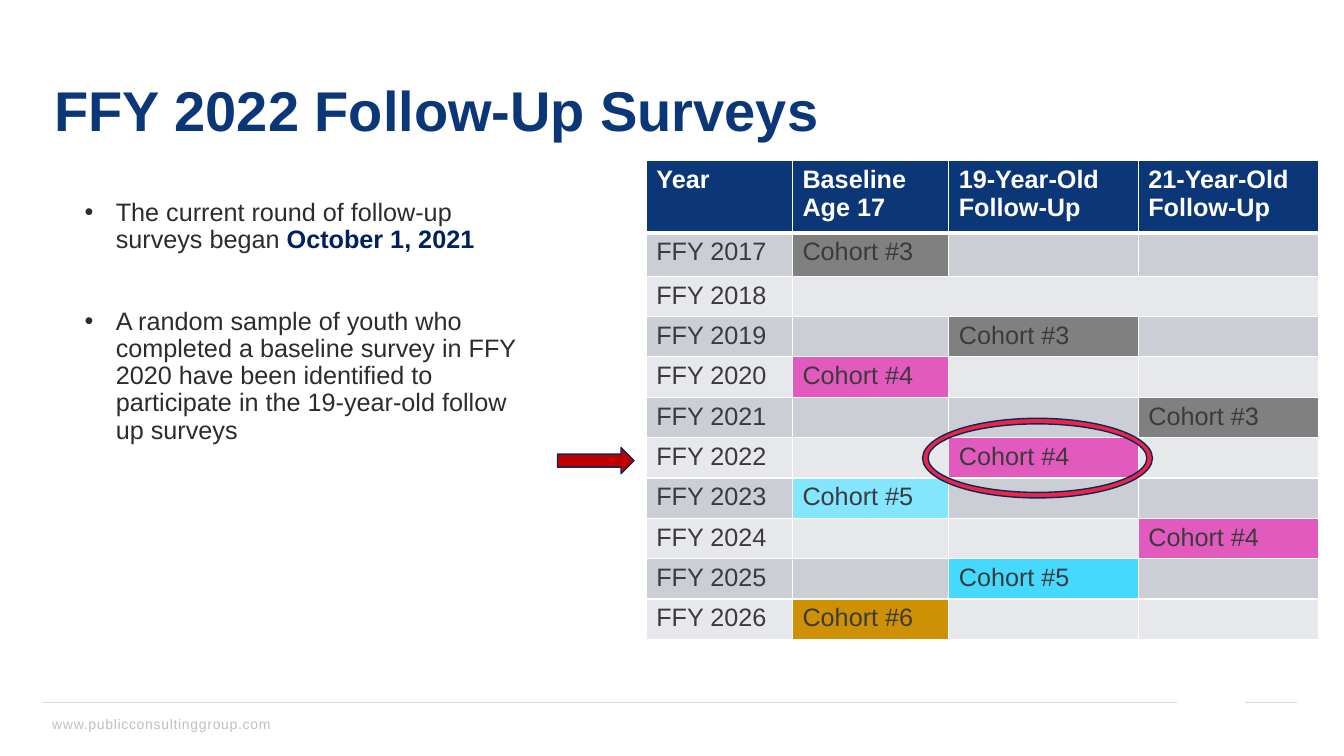
from lxml import etree
from pptx import Presentation
from pptx.dml.color import RGBColor
from pptx.enum.shapes import MSO_CONNECTOR, MSO_SHAPE
from pptx.enum.text import MSO_ANCHOR, PP_ALIGN
from pptx.oxml import parse_xml
from pptx.oxml.ns import nsdecls, qn
from pptx.util import Inches, Pt

NAVY, OUTLINE, WHITE = "0B3677", "082858", "FFFFFF"
BANDS = ("CCCED6", "E7E8EC")
GREY, PINK, PALE_CYAN, CYAN, GOLD = "808080", "E35ABF", "84E5FF", "46D9FF", "CE9105"

COLUMN_WIDTHS = (1.45, 1.55, 1.88, 1.79)
ROW_HEIGHTS = (0.72, 0.43) + (0.4,) * 9
HEADERS = ("Year", "Baseline\nAge 17", "19-Year-Old\nFollow-Up", "21-Year-Old\nFollow-Up")
FIRST_YEAR = 2017
# One entry per year: (column, cohort number, fill), or None for a year without surveys
COHORTS = (
    (1, 3, GREY),
    None,
    (2, 3, GREY),
    (1, 4, PINK),
    (3, 3, GREY),
    (2, 4, PINK),
    (1, 5, PALE_CYAN),
    (3, 4, PINK),
    (2, 5, CYAN),
    (1, 6, GOLD),
)
BULLETS = (
    (("The current round of follow-up surveys began ", "2C2C2C", False),
     ("October 1, 2021", "002060", True)),
    (("A random sample of youth who completed a baseline survey in FFY 2020 have been "
      "identified to participate in the 19-year-old follow up surveys", "2C2C2C", False),),
)


def rgb(color):
    return RGBColor.from_string(color)


def place(shape, left, top, width, height):
    shape.left, shape.top = Inches(left), Inches(top)
    shape.width, shape.height = Inches(width), Inches(height)


class SurveySlide:
    """Holds the text style and the slide being built."""

    def __init__(self, presentation, font_name="Arial"):
        self.font_name = font_name
        self.slide = presentation.slides.add_slide(presentation.slide_layouts[5])
        self.shapes = self.slide.shapes

    def format_font(self, font, size, color, bold=False):
        font.name, font.size, font.bold = self.font_name, Pt(size), bold
        font.color.rgb = rgb(color)

    def title(self, wording, *box):
        title = self.shapes.title
        place(title, *box)
        frame = title.text_frame
        frame.text = wording
        frame.vertical_anchor = MSO_ANCHOR.MIDDLE
        heading = frame.paragraphs[0]
        heading.alignment, heading.line_spacing = PP_ALIGN.LEFT, 0.9
        self.format_font(heading.runs[0].font, 40, NAVY, True)

    def text_frame(self, *box):
        frame = self.shapes.add_textbox(*map(Inches, box)).text_frame
        frame.word_wrap = True
        return frame

    def footer(self, wording, *box):
        frame = self.text_frame(*box)
        frame.text = wording
        run = frame.paragraphs[0].runs[0]
        self.format_font(run.font, 10, "BFBFBF")
        run.font._element.set("spc", "50")

    def bullets(self, items, *box):
        frame = self.text_frame(*box)
        for index, pieces in enumerate(items):
            item = frame.add_paragraph() if index else frame.paragraphs[0]
            properties = item._p.get_or_add_pPr()
            properties.set("marL", str(Inches(0.31)))
            properties.set("indent", str(-Inches(0.31)))
            etree.SubElement(properties, qn("a:buFont")).set("typeface", self.font_name)
            etree.SubElement(properties, qn("a:buChar")).set("char", "•")
            item.line_spacing = 0.9
            item.space_before = Pt(39 if index else 0)
            for wording, color, bold in pieces:
                run = item.add_run()
                run.text = wording
                self.format_font(run.font, 18, color, bold)

    def rule(self, start, end, y):
        rule = self.shapes.add_connector(
            MSO_CONNECTOR.STRAIGHT, Inches(start), Inches(y), Inches(end), Inches(y))
        rule.line.color.rgb, rule.line.width = rgb("D9D9D9"), Pt(0.5)
        etree.SubElement(rule._element.spPr, qn("a:effectLst"))

    def marker(self, kind, fill, *box):
        marker = self.shapes.add_shape(kind, *map(Inches, box))
        marker.shadow.inherit = False
        marker.fill.solid()
        marker.fill.fore_color.rgb = rgb(fill)
        marker.line.color.rgb, marker.line.width = rgb(OUTLINE), Pt(1)
        return marker

    def cell(self, cell, wording, fill, color, bold=False, top=1, bottom=1):
        cell.text = wording
        for paragraph in cell.text_frame.paragraphs:
            self.format_font(paragraph.font, 18, color, bold)
            for run in paragraph.runs:
                self.format_font(run.font, 18, color, bold)
        properties = cell._tc.get_or_add_tcPr()
        for side, width in (("L", 1), ("R", 1), ("T", top), ("B", bottom)):
            properties.append(parse_xml(
                f'<a:ln{side} {nsdecls("a")} w="{Pt(width)}"><a:solidFill>'
                f'<a:srgbClr val="{WHITE}"/></a:solidFill></a:ln{side}>'))
        cell.fill.solid()
        cell.fill.fore_color.rgb = rgb(fill)

    def cohort_table(self, left, top):
        table = self.shapes.add_table(
            len(ROW_HEIGHTS), len(COLUMN_WIDTHS), Inches(left), Inches(top),
            Inches(sum(COLUMN_WIDTHS)), Inches(sum(ROW_HEIGHTS))).table
        for column, width in zip(table.columns, COLUMN_WIDTHS):
            column.width = Inches(width)
        for row, height in zip(table.rows, ROW_HEIGHTS):
            row.height = Inches(height)
        for column, header in enumerate(HEADERS):
            self.cell(table.cell(0, column), header, NAVY, WHITE, True, bottom=3)
        for index, cohort in enumerate(COHORTS):
            row, band = index + 1, BANDS[index % 2]
            for column in range(len(HEADERS)):
                wording, fill = "", band
                if column == 0:
                    wording = f"FFY {FIRST_YEAR + index}"
                elif cohort and cohort[0] == column:
                    wording, fill = f"Cohort #{cohort[1]}", cohort[2]
                self.cell(table.cell(row, column), wording, fill, "3B3B3B",
                          top=3 if row == 1 else 1)
            if cohort is None:
                table.cell(row, 1).merge(table.cell(row, len(HEADERS) - 1))


def main():
    presentation = Presentation()
    presentation.slide_width, presentation.slide_height = Inches(13.33), Inches(7.5)
    page = SurveySlide(presentation)
    page.footer("www.publicconsultinggroup.com", 0.42, 7.05, 3.87, 0.28)
    page.rule(0.42, 11.67, 6.97)
    page.rule(12.35, 12.86, 6.97)
    page.title("FFY 2022 Follow-Up Surveys", 0.44, 0.4, 12.46, 1.45)
    page.bullets(BULLETS, 0.74, 1.93, 4.51, 4.56)
    page.marker(MSO_SHAPE.RIGHT_ARROW, "C00000", 5.53, 4.44, 0.76, 0.26)
    page.cohort_table(6.41, 1.59)
    highlight = page.marker(MSO_SHAPE.DONUT, "EE2346", 9.15, 4.15, 2.28, 0.79)
    highlight.adjustments[0] = 0.07
    presentation.save("out.pptx")


if __name__ == "__main__":
    main()
